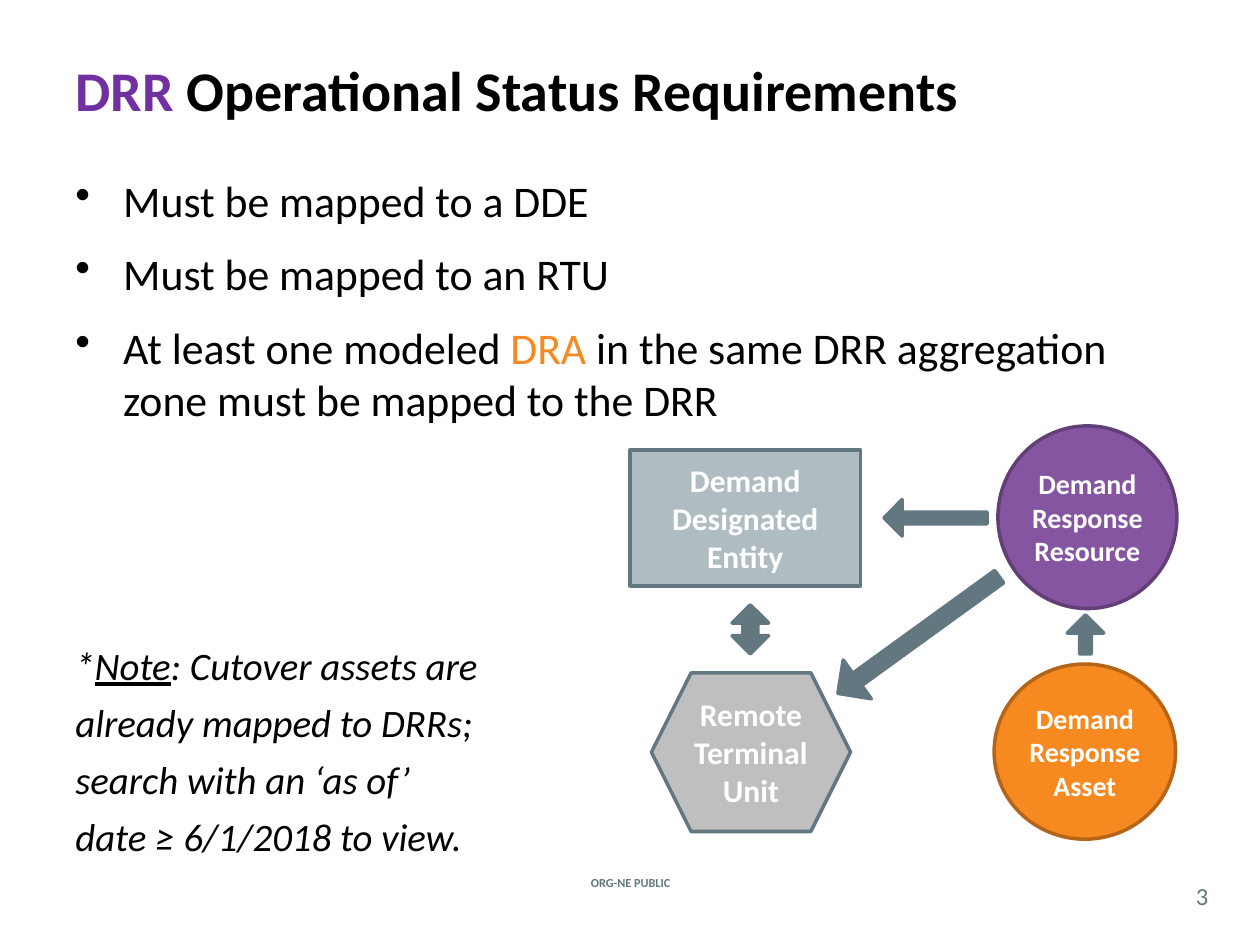
"""Build the DRR operational status requirements slide."""
from lxml.etree import SubElement
from pptx import Presentation
from pptx.dml.color import RGBColor
from pptx.enum.shapes import MSO_SHAPE as Shape
from pptx.enum.text import MSO_ANCHOR as Anchor, PP_ALIGN as Align
from pptx.oxml.ns import qn
from pptx.util import Inches, Pt

BLACK = RGBColor(0x00, 0x00, 0x00)
WHITE = RGBColor(0xFF, 0xFF, 0xFF)
SLATE = RGBColor(0x62, 0x77, 0x7F)
MIST = RGBColor(0xAF, 0xBC, 0xC1)
SILVER = RGBColor(0xBF, 0xBF, 0xBF)
VIOLET = RGBColor(0x70, 0x30, 0xA0)
PURPLE = RGBColor(0x85, 0x55, 0xA1)
DARK_PURPLE = RGBColor(0x62, 0x3F, 0x77)
ORANGE = RGBColor(0xF6, 0x89, 0x20)
DARK_ORANGE = RGBColor(0xB6, 0x65, 0x18)


def apply(target, values):
    for attribute, value in values.items():
        setattr(target, attribute, value)


class StatusSlide:
    font_name = "Calibri"
    line_width = Pt(2)

    def __init__(self, deck):
        self.slide = deck.slides.add_slide(deck.slide_layouts[5])

    def fill_text(self, frame, paragraphs, size, color=BLACK, align=Align.LEFT,
                  anchor=Anchor.MIDDLE, gap=0, bullet=None, insets=None, **font):
        frame.word_wrap = True
        frame.vertical_anchor = anchor
        if insets:
            sides = ("margin_left", "margin_top", "margin_right", "margin_bottom")
            apply(frame, dict(zip(sides, map(Inches, insets))))
        for index, pieces in enumerate(paragraphs):
            paragraph = frame.add_paragraph() if index else frame.paragraphs[0]
            if bullet:
                properties = paragraph._p.get_or_add_pPr()
                properties.set("marL", str(Inches(0.38)))
                properties.set("indent", str(Inches(-0.38)))
                SubElement(properties, qn("a:buChar"), char=bullet)
            apply(paragraph, {"alignment": align, "space_before": Pt(gap if index else 0)})
            for piece in [pieces] if isinstance(pieces, str) else pieces:
                words, extra = (piece, {}) if isinstance(piece, str) else piece
                style = {"name": self.font_name, "size": Pt(size), **font, **extra}
                run = paragraph.add_run()
                run.text = words
                run.font.color.rgb = style.pop("color", color)
                apply(run.font, style)

    def title(self, box, pieces):
        heading = self.slide.shapes.title
        apply(heading, dict(zip(("left", "top", "width", "height"), map(Inches, box))))
        self.fill_text(heading.text_frame, [pieces], 32, bold=True)

    def text(self, box, paragraphs, size, **style):
        textbox = self.slide.shapes.add_textbox(*map(Inches, box))
        self.fill_text(textbox.text_frame, paragraphs, size, **style)

    def shape(self, kind, box, fill, outline=SLATE):
        shape = self.slide.shapes.add_shape(kind, *map(Inches, box))
        shape.shadow.inherit = False
        shape.fill.solid()
        shape.fill.fore_color.rgb = fill
        shape.line.color.rgb = outline
        shape.line.width = self.line_width
        return shape

    def node(self, kind, box, paragraphs, size, fill, outline=SLATE, insets=None):
        node = self.shape(kind, box, fill, outline)
        self.fill_text(node.text_frame, paragraphs, size, WHITE, Align.CENTER,
                       insets=insets, bold=True)

    def arrow(self, box, rotation=0, kind=Shape.UP_ARROW, proportions=(0.32, 0.5)):
        arrow = self.shape(kind, box, SLATE)
        arrow.rotation = rotation
        for index, proportion in enumerate(proportions):
            arrow.adjustments[index] = proportion


def main():
    deck = Presentation()
    apply(deck, {"slide_width": Inches(10), "slide_height": Inches(7.5)})
    page = StatusSlide(deck)

    page.title((0.5, 0.08, 9, 1.25),
               [("DRR", {"color": VIOLET}), " Operational Status Requirements"])
    page.text((0.5, 1.33, 9, 2.2), [
        "Must be mapped to a DDE",
        "Must be mapped to an RTU",
        ["At least one modeled ", ("DRA", {"color": ORANGE}),
         " in the same DRR aggregation zone must be mapped to the DRR"],
    ], 25, anchor=Anchor.TOP, gap=12, bullet="•")
    page.text((0.5, 5.04, 4.2, 1.9), [
        ["*", ("Note", {"underline": True}), ": Cutover assets are"],
        "already mapped to DRRs;",
        "search with an ‘as of’",
        "date ≥ 6/1/2018 to view.",
    ], 22.2, anchor=Anchor.TOP, gap=6, italic=True)

    tight = (0.05,) * 4
    page.node(Shape.OVAL, (7.92, 3.38, 1.42, 1.45), ["Demand Response Resource"],
              16, PURPLE, DARK_PURPLE, tight)
    page.node(Shape.OVAL, (7.89, 5.27, 1.44, 1.39), ["Demand Response Asset"],
              16, ORANGE, DARK_ORANGE, tight)
    page.node(Shape.RECTANGLE, (5, 3.57, 1.83, 1.08), ["Demand Designated Entity"],
              18, MIST)
    page.node(Shape.HEXAGON, (5.17, 5.34, 1.58, 1.26), ["Remote Terminal", "Unit"],
              18, SILVER, insets=(0, 0.05, 0, 0.05))

    page.arrow((8.47, 4.88, 0.29, 0.31))
    page.arrow((7.28, 3.7, 0.29, 0.82), 270)
    page.arrow((7.1, 4.25, 0.38, 1.58), 234.1)
    page.arrow((5.81, 4.8, 0.29, 0.39), 0, Shape.UP_DOWN_ARROW, (0.44, 0.41))

    page.text((4.27, 6.92, 1.47, 0.17), ["ORG-NE PUBLIC"], 7, color=SLATE,
              align=Align.CENTER, bold=True)
    page.text((9.33, 6.96, 0.42, 0.29), ["3"], 14, color=SLATE,
              align=Align.CENTER, insets=(0,) * 4)
    deck.save("out.pptx")


if __name__ == "__main__":
    main()
